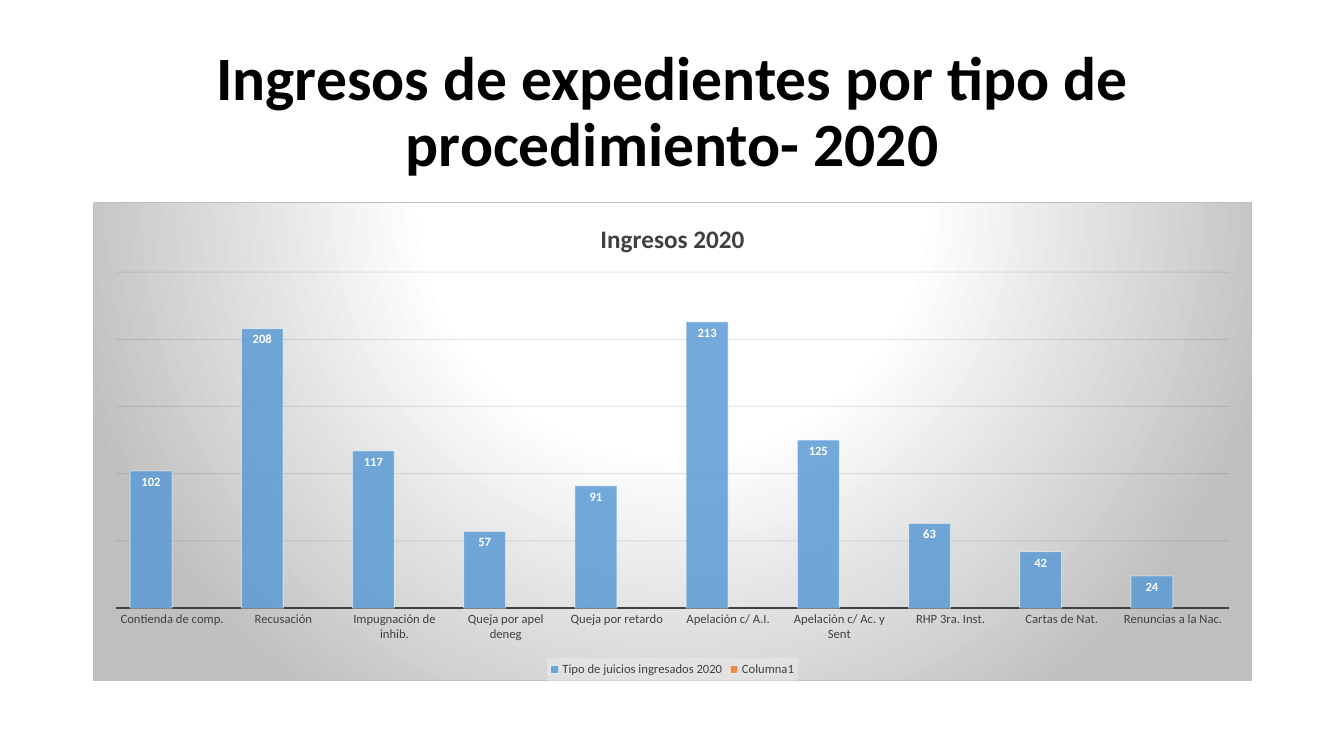
"""Build a slide with a column chart of the case files received in 2020."""
from lxml.etree import SubElement
from pptx import Presentation
from pptx.chart.data import CategoryChartData
from pptx.dml.color import RGBColor
from pptx.enum.chart import XL_CHART_TYPE, XL_LABEL_POSITION, XL_LEGEND_POSITION, XL_TICK_MARK
from pptx.enum.text import MSO_ANCHOR, PP_ALIGN
from pptx.oxml import parse_xml
from pptx.oxml.ns import nsdecls, qn
from pptx.util import Inches, Pt

TITLE = "Ingresos de expedientes por tipo de procedimiento- 2020"
CHART_TITLE = "Ingresos 2020"
INCOME = {
    "Contienda de comp.": 102,
    "Recusación": 208,
    "Impugnación de inhib.": 117,
    "Queja por apel deneg": 57,
    "Queja por retardo": 91,
    "Apelación c/ A.I.": 213,
    "Apelación c/ Ac. y Sent": 125,
    "RHP 3ra. Inst.": 63,
    "Cartas de Nat.": 42,
    "Renuncias a la Nac.": 24,
}
SERIES = {
    "Tipo de juicios ingresados 2020": list(INCOME.values()),
    "Columna1": [None] * len(INCOME),
}
COLORS = {
    "black": "000000", "white": "FFFFFF", "text": "404040", "grid": "0D0D0D",
    "edge": "BFBFBF", "legend": "F2F2F2", "bars": ["5B9BD5", "ED7D31"],
}
FONT = "Calibri"
MARGIN, WIDTH = 0.92, 11.5


def set_font(font, size, color, bold=False):
    font.name, font.size, font.bold = FONT, Pt(size), bold
    font.color.rgb = RGBColor.from_string(color)


def set_line(line, color, width):
    line.color.rgb = RGBColor.from_string(color)
    line.width = Pt(width)


def set_alpha(element, color, percent):
    for clr in element.iter(qn("a:srgbClr")):
        if clr.get("val") == color:
            SubElement(clr, qn("a:alpha"), val=str(percent * 1000))


def shape_properties(content):
    return parse_xml(f'<c:spPr {nsdecls("c", "a")}>{content}</c:spPr>')


def add_title(s):
    title = s.shapes.title
    title.left, title.top = Inches(MARGIN), Inches(0.4)
    title.width, title.height = Inches(WIDTH), Inches(1.45)
    tf = title.text_frame
    tf.text = TITLE
    tf.word_wrap, tf.vertical_anchor = True, MSO_ANCHOR.MIDDLE
    p = tf.paragraphs[0]
    p.alignment, p.line_spacing = PP_ALIGN.CENTER, 0.9
    set_font(p.runs[0].font, 44, COLORS["black"], True)


def add_income_chart(s):
    data = CategoryChartData()
    data.categories = list(INCOME)
    for name, values in SERIES.items():
        data.add_series(name, values)
    chart = s.shapes.add_chart(
        XL_CHART_TYPE.COLUMN_CLUSTERED, Inches(MARGIN), Inches(2),
        Inches(WIDTH), Inches(4.76), data).chart
    set_font(chart.font, 10, COLORS["black"])
    chart.has_title = True
    chart.chart_title.include_in_layout = False
    tf = chart.chart_title.text_frame
    tf.text = CHART_TITLE
    set_font(tf.paragraphs[0].runs[0].font, 18, COLORS["text"], True)
    return chart


def style_axes(chart):
    axis = chart.category_axis
    axis.major_tick_mark = axis.minor_tick_mark = XL_TICK_MARK.NONE
    set_font(axis.tick_labels.font, 9, COLORS["text"])
    set_line(axis.format.line, COLORS["text"], 1.5)
    axis = chart.value_axis
    axis.visible = False
    axis.minimum_scale, axis.maximum_scale, axis.major_unit = 0, 250, 50
    axis.has_major_gridlines = True
    set_line(axis.major_gridlines.format.line, COLORS["grid"], 0.75)
    set_alpha(axis.major_gridlines.format.line._get_or_add_ln(), COLORS["grid"], 10)


def style_columns(chart):
    plot = chart.plots[0]
    plot.gap_width, plot.overlap, plot.vary_by_categories = 65, 0, False
    for series, color in zip(plot.series, COLORS["bars"]):
        series.format.fill.solid()
        series.format.fill.fore_color.rgb = RGBColor.from_string(color)
        set_line(series.format.line, COLORS["white"], 0.75)
        properties = series._element.find(qn("c:spPr"))
        set_alpha(properties, color, 85)
        set_alpha(properties, COLORS["white"], 50)
        labels = series.data_labels
        labels.show_value = True
        labels.position = XL_LABEL_POSITION.INSIDE_END
        set_font(labels.font, 9, COLORS["white"], True)


def style_legend(chart):
    chart.has_legend = True
    legend = chart.legend
    legend.position, legend.include_in_layout = XL_LEGEND_POSITION.BOTTOM, False
    set_font(legend.font, 9, COLORS["text"])
    fill = shape_properties(
        f'<a:solidFill><a:srgbClr val="{COLORS["legend"]}"/></a:solidFill>')
    set_alpha(fill, COLORS["legend"], 39)
    legend._element.find(qn("c:overlay")).addnext(fill)


def style_background(chart):
    stops = "".join(
        f'<a:gs pos="{pos * 1000}"><a:srgbClr val="{COLORS[name]}"/></a:gs>'
        for pos, name in [(0, "white"), (39, "white"), (100, "edge")])
    background = shape_properties(
        f'<a:gradFill><a:gsLst>{stops}</a:gsLst><a:path path="circle">'
        '<a:fillToRect l="50000" t="-80000" r="50000" b="180000"/></a:path></a:gradFill>'
        f'<a:ln w="{Pt(0.75)}"><a:solidFill><a:srgbClr val="{COLORS["edge"]}"/>'
        '</a:solidFill></a:ln>')
    chart._chartSpace.find(qn("c:chart")).addnext(background)


def main():
    prs = Presentation()
    prs.slide_width, prs.slide_height = Inches(13.33), Inches(7.5)
    s = prs.slides.add_slide(prs.slide_layouts[5])
    add_title(s)
    chart = add_income_chart(s)
    for style in (style_axes, style_columns, style_legend, style_background):
        style(chart)
    prs.save("out.pptx")


if __name__ == "__main__":
    main()
